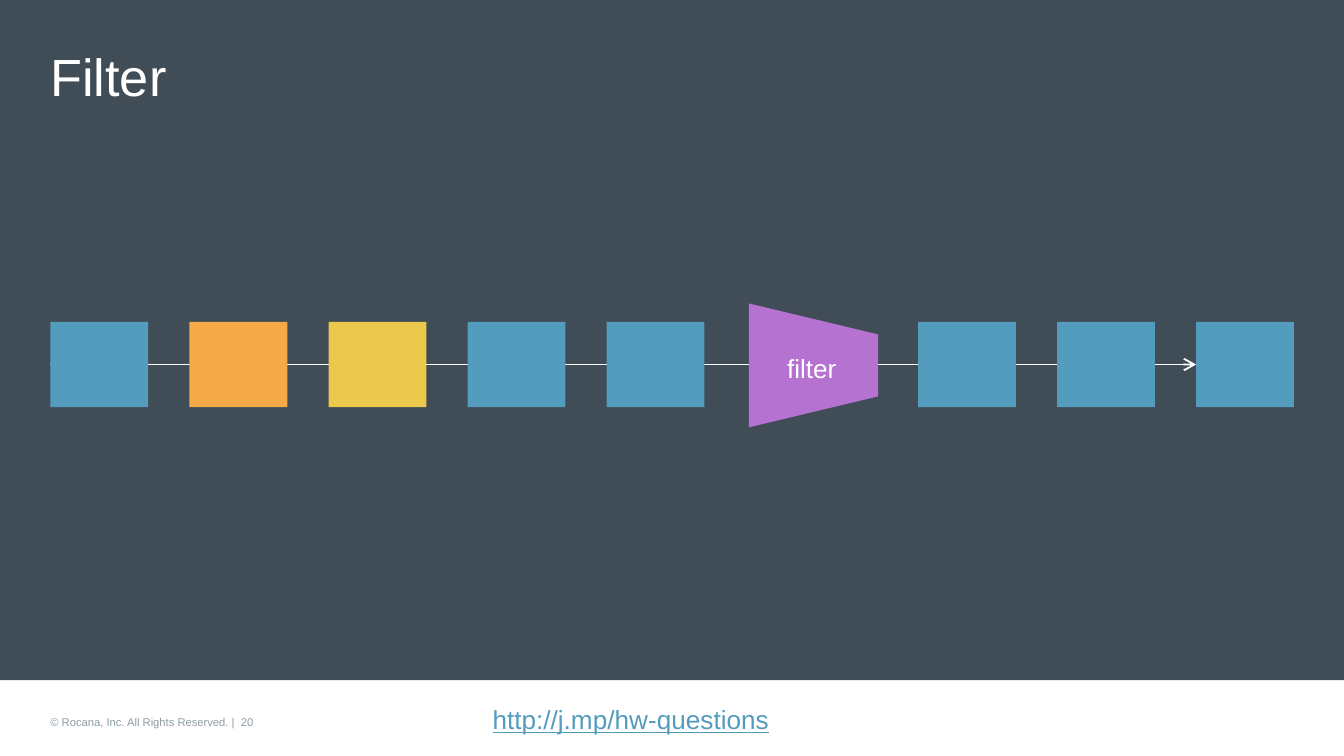
from lxml import etree
from pptx import Presentation
from pptx.dml.color import RGBColor
from pptx.enum import shapes, text
from pptx.oxml.ns import qn
from pptx.util import Pt

SLATE, WHITE, GREY = "404D56", "FFFFFF", "8D9DA4"
BLUE, ORANGE, YELLOW, PURPLE = "549CBD", "F5AA47", "EBC94C", "B572D0"
LEFT, PITCH, FLOW_Y = 27, 74.5, 195.3
EVENT_W, EVENT_H = 52.4, 45.8


def color(value):
    return RGBColor.from_string(value)


def add_block(s, kind, x, y, w, h, fill):
    sp = s.shapes.add_shape(kind, Pt(x), Pt(y), Pt(w), Pt(h))
    sp.shadow.inherit = False
    sp.fill.solid()
    sp.fill.fore_color.rgb = color(fill)
    sp.line.fill.background()
    return sp


def add_label(s, words, x, y, w, h, size, fill, align=text.PP_ALIGN.LEFT,
              anchor=text.MSO_ANCHOR.TOP, spacing=1.0, wrap=True, underline=False):
    tf = s.shapes.add_textbox(Pt(x), Pt(y), Pt(w), Pt(h)).text_frame
    tf.margin_left = tf.margin_right = tf.margin_top = tf.margin_bottom = 0
    tf.word_wrap = wrap
    tf.vertical_anchor = anchor
    p = tf.paragraphs[0]
    p.alignment = align
    p.line_spacing = spacing
    r = p.add_run()
    r.text = words
    r.font.name = "Arial"
    r.font.size = Pt(size)
    r.font.color.rgb = color(fill)
    if underline:
        r.font.underline = True


def add_arrow(s, x1, x2, y):
    line = s.shapes.add_connector(shapes.MSO_CONNECTOR.STRAIGHT,
                                  Pt(x1), Pt(y), Pt(x2), Pt(y))
    line.line.color.rgb = color(WHITE)
    line.line.width = Pt(1)
    etree.SubElement(line.line._get_or_add_ln(), qn("a:tailEnd"), type="arrow")
    etree.SubElement(line._element.spPr, qn("a:effectLst"))


def add_events(s, x, fills):
    """Place a row of evenly spaced events centred on the flow line."""
    for i, fill in enumerate(fills):
        add_block(s, shapes.MSO_SHAPE.RECTANGLE, x + i * PITCH,
                  FLOW_Y - EVENT_H / 2, EVENT_W, EVENT_H, fill)


def add_filter(s, center_x):
    w, h = 66.4, 69.3
    sp = add_block(s, shapes.MSO_SHAPE.TRAPEZOID, center_x - w / 2,
                   FLOW_Y + 0.5 - h / 2, w, h, PURPLE)
    sp.rotation = 90


def main():
    prs = Presentation()
    prs.slide_width, prs.slide_height = Pt(720), Pt(405)
    s = prs.slides.add_slide(prs.slide_layouts[6])
    center = text.PP_ALIGN.CENTER

    add_block(s, shapes.MSO_SHAPE.RECTANGLE, 0, 0, 720, 364.4, SLATE)
    add_label(s, "© Rocana, Inc. All Rights Reserved. |  20",
              LEFT, 383.2, 360, 7.2, 6, GREY)
    add_label(s, "http://j.mp/hw-questions", 263.5, 376, 149, 17, 14, BLUE,
              align=center, spacing=1.05, wrap=False, underline=True)
    add_label(s, "Filter", LEFT, 16.6, 666, 48.2, 28, WHITE,
              anchor=text.MSO_ANCHOR.MIDDLE)

    add_arrow(s, LEFT, 640.8, FLOW_Y)
    add_events(s, LEFT, [BLUE, ORANGE, YELLOW, BLUE, BLUE])
    add_filter(s, 435.8)
    add_events(s, 491.8, [BLUE] * 3)
    add_label(s, "filter", 421.2, 188, 27.4, 17, 14, WHITE,
              align=center, spacing=1.05, wrap=False)

    prs.save("out.pptx")


if __name__ == "__main__":
    main()
